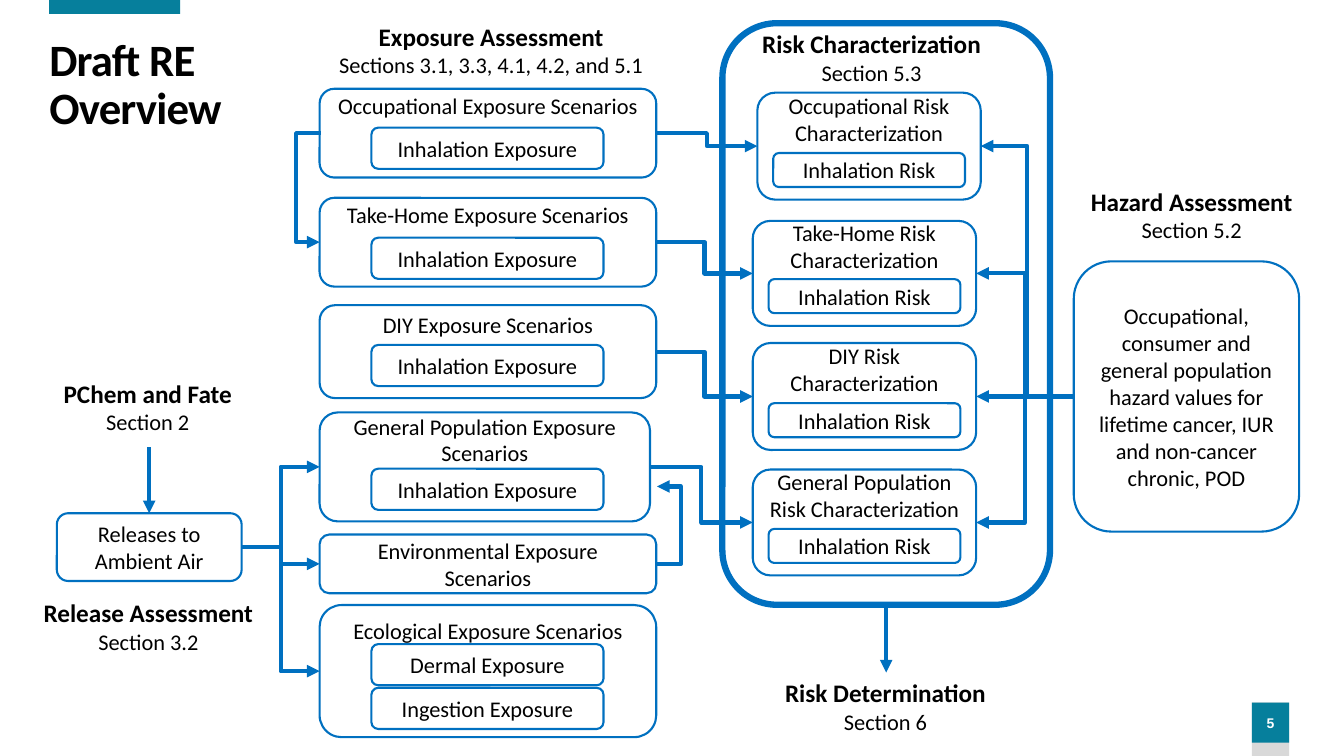
from typing import NamedTuple, Optional, Union

from lxml.etree import SubElement
from pptx import Presentation
from pptx.dml.color import RGBColor
from pptx.enum.shapes import MSO_CONNECTOR as Wire, MSO_SHAPE as Form
from pptx.enum.text import MSO_ANCHOR as Anchor, MSO_AUTO_SIZE as Fit, PP_ALIGN as Align
from pptx.oxml.ns import qn
from pptx.shapes.autoshape import Shape
from pptx.util import Pt

BLUE = RGBColor(0x00, 0x70, 0xC0)
TEAL = RGBColor(0x06, 0x7F, 0x9C)
GRAY = RGBColor(0xD9, 0xD9, 0xD9)
WHITE = RGBColor(0xFF, 0xFF, 0xFF)
BLACK = RGBColor(0, 0, 0)
TOP, LEFT, BOTTOM, RIGHT = range(4)
ROW = 19.5  # height of one line of 16-point text


class Rect(NamedTuple):
    x: float
    y: float
    w: float
    h: float


class Point(NamedTuple):
    x: float
    y: float


class Side(NamedTuple):
    shape: Shape
    site: int


class Group(NamedTuple):
    text: str
    rect: Rect
    inner: tuple[tuple[str, float], ...] = ()  # caption and top of each inner box


class Label(NamedTuple):
    head: str
    sub: str
    rect: Rect


End = Union[Point, Side]

EXPO_X, EXPO_W = 228.3, 240.5
INHALE = "Inhalation Exposure"
EXPOSURES = [
    Group("Occupational Exposure Scenarios", Rect(EXPO_X, 63.4, EXPO_W, 63.4), ((INHALE, 91.2),)),
    Group("Take-Home Exposure Scenarios", Rect(EXPO_X, 141.3, EXPO_W, 63.4), ((INHALE, 169.8),)),
    Group("DIY Exposure Scenarios", Rect(EXPO_X, 218, EXPO_W, 66.4), ((INHALE, 246.4),)),
    Group("General Population Exposure Scenarios", Rect(EXPO_X, 294.6, 236, 77.8), ((INHALE, 334.8),)),
    Group("Environmental Exposure Scenarios", Rect(EXPO_X, 381.8, EXPO_W, 42)),
    Group("Ecological Exposure Scenarios", Rect(EXPO_X, 432.2, EXPO_W, 94.4),
          (("Dermal Exposure", 460.1), ("Ingestion Exposure", 491.3))),
]
RISK_X, RISK_W = 537.7, 159.6
DANGER = "Inhalation Risk"
RISKS = [
    Group("Occupational Risk Characterization", Rect(541, 66.2, RISK_W, 76.4), ((DANGER, 109.3),)),
    Group("Take-Home Risk Characterization", Rect(RISK_X, 157.8, RISK_W, 75), ((DANGER, 199.4),)),
    Group("DIY Risk Characterization", Rect(RISK_X, 245, RISK_W, 76.4), ((DANGER, 288),)),
    Group("General Population Risk Characterization", Rect(RISK_X, 335.4, RISK_W, 75.6), ((DANGER, 377.8),)),
]
LABELS = [
    Label("Release Assessment", "Section 3.2", Rect(23.6, 423.4, 164.8, 48.2)),
    Label("Exposure Assessment", "Sections 3.1, 3.3, 4.1, 4.2, and 5.1", Rect(233.8, 11.4, 234, 48.2)),
    Label("Risk Characterization", "Section 5.3", Rect(536.6, 16.8, 172, 48.2)),
    Label("Hazard Assessment", "Section 5.2", Rect(771.2, 129.6, 160, 48.2)),
    Label("Risk Determination", "Section 6", Rect(553, 480.4, 159, 48.2)),
    Label("PChem and Fate", "Section 2", Rect(37.6, 266.4, 136, 48.2)),
]

deck = Presentation()
deck.slide_width, deck.slide_height = Pt(960), Pt(540)
slide = deck.slides.add_slide(deck.slide_layouts[5])
shapes = slide.shapes


def write(para, text: str, size: float, bold: bool = False,
          color: RGBColor = BLACK, face: str = "Calibri"):
    run = para.add_run()
    run.text = text
    font = run.font
    font.name, font.size, font.bold = face, Pt(size), bold
    font.color.rgb = color
    return run


def draw(form: Form, rect: Rect, fill: Optional[RGBColor], line: float = 0) -> Shape:
    shape = shapes.add_shape(form, *map(Pt, rect))
    shape.shadow.inherit = False
    if fill is None:
        shape.fill.background()
    else:
        shape.fill.solid()
        shape.fill.fore_color.rgb = fill
    if line:
        shape.line.color.rgb = BLUE
        shape.line.width = Pt(line)
    else:
        shape.line.fill.background()
    return shape


def box(text: str, rect: Rect, rows: int = 0) -> Shape:
    """Draw a rounded box, keeping room for some rows below its text."""
    shape = draw(Form.ROUNDED_RECTANGLE, rect, WHITE, 1.5)
    frame = shape.text_frame
    frame.word_wrap = True
    frame.vertical_anchor = Anchor.MIDDLE
    frame.margin_top, frame.margin_bottom = 0, Pt(rows * ROW)
    para = frame.paragraphs[0]
    para.alignment = Align.CENTER
    write(para, text, 16)
    return shape


def nest(group: Group, inset: float, width: float, height: float) -> Shape:
    """Draw a box with its inner boxes."""
    count = len(group.inner)
    outer = box(group.text, group.rect, count + 1 if count else 0)
    for text, top in group.inner:
        box(text, Rect(group.rect.x + inset, top, width, height))
    return outer


def label(item: Label) -> None:
    frame = shapes.add_textbox(*map(Pt, item.rect)).text_frame
    frame.word_wrap = False
    first, second = frame.paragraphs[0], frame.add_paragraph()
    first.alignment = second.alignment = Align.CENTER
    write(first, item.head, 18, True)
    write(second, item.sub, 16)


def arrow(kind: Wire, start: End, end: End, bend: Optional[float] = None) -> None:
    """Draw an arrow; bend is the x of an elbow's upright part between free points."""
    spots = [Point(0, 0) if isinstance(e, Side) else e for e in (start, end)]
    line = shapes.add_connector(kind, *(Pt(v) for spot in spots for v in spot))
    if isinstance(start, Side):
        line.begin_connect(start.shape, start.site)
    if isinstance(end, Side):
        line.end_connect(end.shape, end.site)
    line.line.color.rgb = BLUE
    line.line.width = Pt(3)
    props = line._element.spPr
    SubElement(props.find(qn("a:ln")), qn("a:tailEnd"), type="triangle")
    SubElement(props, qn("a:effectLst"))
    if bend is not None:
        part = round((bend - spots[0].x) / (spots[1].x - spots[0].x) * 100000)
        guides = props.find(qn("a:prstGeom")).get_or_add_avLst()
        SubElement(guides, qn("a:gd"), name="adj1", fmla=f"val {part}")


def title() -> None:
    head = shapes.title
    head.left, head.top, head.width, head.height = map(Pt, (28, 26, 187, 71))
    frame = head.text_frame
    frame.word_wrap, frame.auto_size = True, Fit.NONE
    frame.vertical_anchor = Anchor.MIDDLE
    para = frame.paragraphs[0]
    para.alignment, para.line_spacing = Align.LEFT, 0.9
    run = write(para, "Draft RE Overview", 32, True)
    run.font._element.set("spc", "-60")


def page() -> None:
    draw(Form.RECTANGLE, Rect(894.3, 501.8, 26.6, 38.2), GRAY)
    tile = draw(Form.RECTANGLE, Rect(894.3, 501.8, 26.6, 28.6), TEAL)
    frame = tile.text_frame
    frame.margin_left = frame.margin_right = 0
    frame.vertical_anchor = Anchor.MIDDLE
    para = frame.paragraphs[0]
    para.alignment = Align.CENTER
    write(para, "5", 10, True, WHITE, "Arial")


def main() -> None:
    page()
    draw(Form.RECTANGLE, Rect(35.2, 0, 93.6, 10), TEAL)
    title()
    for item in LABELS:
        label(item)

    release = box("Releases to Ambient Air", Rect(40.6, 366.6, 132, 48.4))
    hazard = box("Occupational, consumer and general population hazard values for "
                 "lifetime cancer, IUR and non-cancer chronic, POD",
                 Rect(767, 186.7, 161, 193))
    expos = [nest(group, 37, 165.8, 29.4) for group in EXPOSURES]
    risks = [nest(group, 11.3, 137, 24.3) for group in RISKS]
    border = draw(Form.ROUNDED_RECTANGLE, Rect(516, 16.6, 234, 415.4), None, 4.5)

    for expo in expos[3:]:
        arrow(Wire.ELBOW, Side(release, RIGHT), Side(expo, LEFT))
    for expo, risk in zip(expos, risks):
        arrow(Wire.ELBOW, Side(expo, RIGHT), Side(risk, LEFT))
    for risk in risks:
        kind = Wire.STRAIGHT if risk is risks[2] else Wire.ELBOW
        arrow(kind, Side(hazard, LEFT), Side(risk, RIGHT))
    arrow(Wire.ELBOW, Point(229.3, 95.1), Point(EXPO_X, 173), 211.4)
    arrow(Wire.ELBOW, Point(468.3, 402.8), Point(469.3, 347.5), 486.4)
    arrow(Wire.STRAIGHT, Side(border, BOTTOM), Point(633, 480.4))
    arrow(Wire.STRAIGHT, Point(106.6, 319.4), Side(release, TOP))
    deck.save("out.pptx")


if __name__ == "__main__":
    main()
